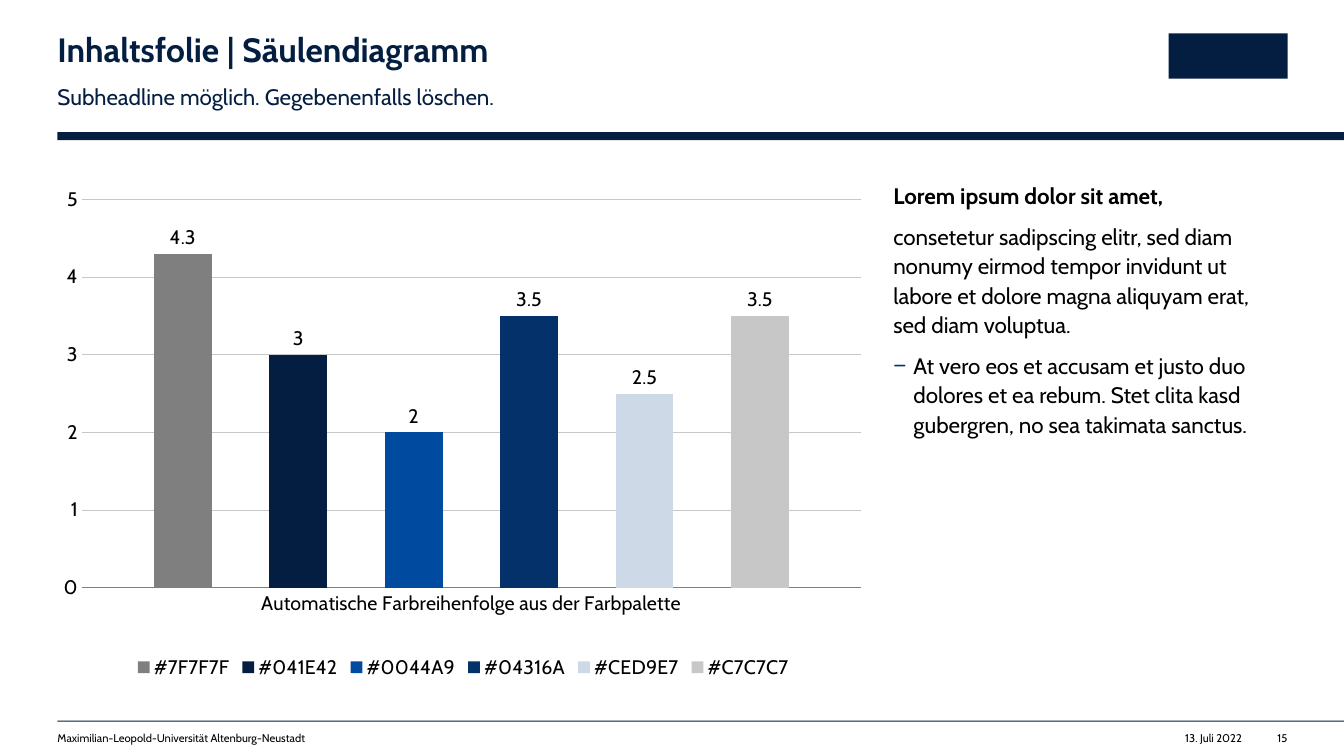
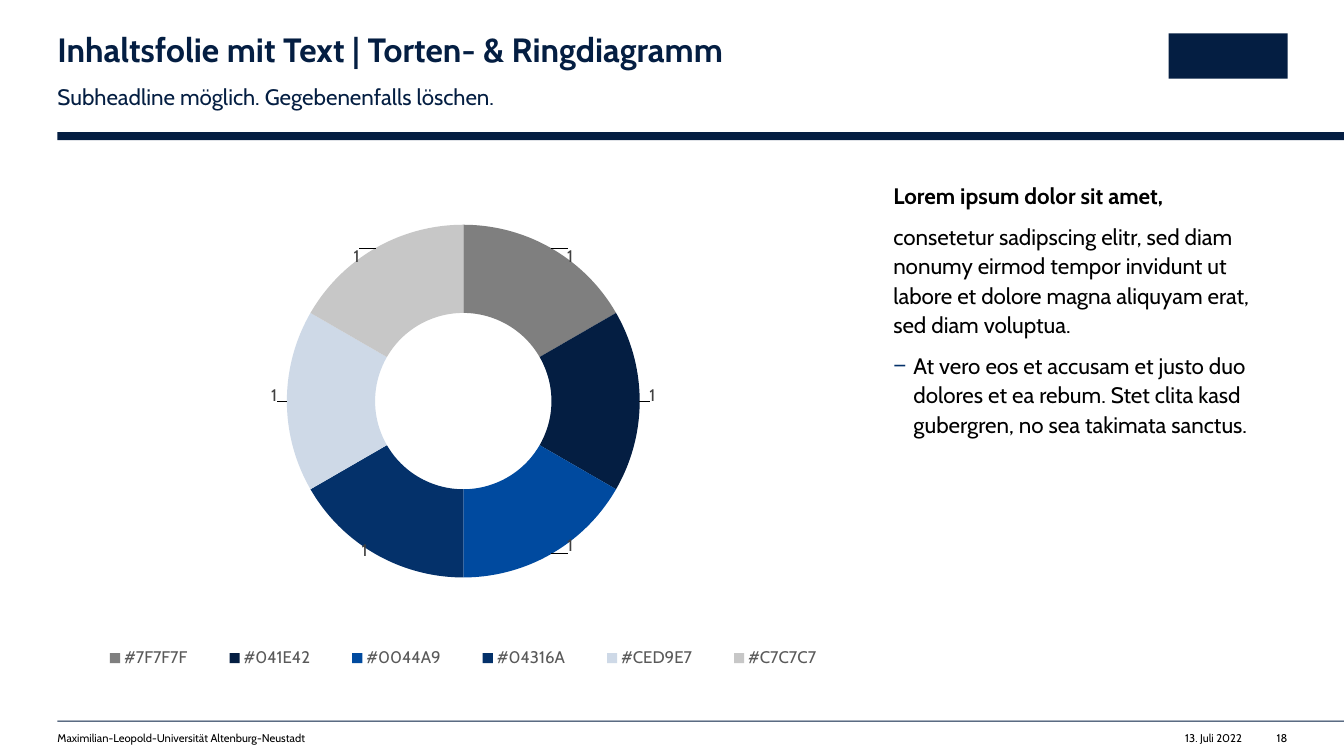
from lxml.etree import SubElement
from pptx import Presentation
from pptx.chart.data import CategoryChartData
from pptx.dml.color import RGBColor
from pptx.enum.chart import XL_CHART_TYPE as ChartType
from pptx.enum.chart import XL_LABEL_POSITION as LabelPosition
from pptx.enum.chart import XL_LEGEND_POSITION as LegendPosition
from pptx.enum.chart import XL_TICK_MARK as TickMark
from pptx.enum.shapes import MSO_SHAPE as Shape
from pptx.enum.text import MSO_ANCHOR as Anchor
from pptx.enum.text import MSO_AUTO_SIZE as AutoSize
from pptx.enum.text import PP_ALIGN as Align
from pptx.oxml.ns import qn
from pptx.util import Inches, Pt

rgb = RGBColor.from_string
FONT = "Cabin"
NAVY, BLACK, GRAY, LIGHT_GRAY = "041E42", "000000", "7F7F7F", "C7C7C7"
PALETTE = {
    "#7F7F7F": GRAY,
    "#041E42": NAVY,
    "#0044A9": "004A9F",
    "#04316A": "04316A",
    "#CED9E7": "CED9E7",
    "#C7C7C7": LIGHT_GRAY,
}
LEFT, RIGHT, SLIDE_WIDTH = 0.57, 12.77, 13.33
CHART_BOX = [Inches(v) for v in (LEFT, 1.78, 8.05, 5)]

PAGES = [
    ("Inhaltsfolie | Säulendiagramm", "15"),
    ("Inhaltsfolie mit Text | Torten- & Ringdiagramm", "18"),
]
BANDS = [  # left, top, width, height
    (LEFT, 1.31, SLIDE_WIDTH - LEFT, 0.08),
    (LEFT, 7.15, SLIDE_WIDTH - LEFT, 0.01),
    (11.59, 0.33, 1.18, 0.45),
]
BODY = [
    "Lorem ipsum dolor sit amet,",
    "consetetur sadipscing elitr, sed diam nonumy eirmod tempor invidunt ut "
    "labore et dolore magna aliquyam erat, sed diam voluptua.",
    "At vero eos et accusam et justo duo dolores et ea rebum. Stet clita kasd "
    "gubergren, no sea takimata sanctus.",
]


def style(font, size, color, bold=False):
    font.name, font.size, font.bold = FONT, Pt(size), bold
    font.color.rgb = rgb(color)


def set_layout(parent, index, **values):
    """Give a chart part a manual layout, as fractions of the chart."""
    for old in parent.findall(qn("c:layout")):
        parent.remove(old)
    layout = SubElement(parent, qn("c:layout"))
    parent.insert(index, layout)
    manual = SubElement(layout, qn("c:manualLayout"))
    for tag, value in values.items():
        SubElement(manual, qn("c:" + tag)).set("val", str(value))


prs = Presentation()
prs.slide_width, prs.slide_height = Inches(SLIDE_WIDTH), Inches(7.5)

slides = []
for heading, number in PAGES:
    slide = prs.slides.add_slide(prs.slide_layouts[1])
    slides.append(slide)

    for box in BANDS:
        band = slide.shapes.add_shape(Shape.RECTANGLE, *[Inches(v) for v in box])
        band.shadow.inherit = False
        band.fill.solid()
        band.fill.fore_color.rgb = rgb(NAVY)
        band.line.fill.background()

    lines = [  # text, left, top, width, height, size, color, alignment
        ("Subheadline möglich. Gegebenenfalls löschen.",
         LEFT, 0.8, 7.3, 0.27, 16, NAVY, Align.LEFT),
        ("Maximilian-Leopold-Universität Altenburg-Neustadt",
         LEFT, 7.26, 5.98, 0.13, 8, BLACK, Align.LEFT),
        ("13. Juli 2022", 11.32, 7.26, 1, 0.13, 8, BLACK, Align.RIGHT),
        (number, RIGHT - 0.4, 7.26, 0.4, 0.13, 8, BLACK, Align.RIGHT),
    ]
    for text, left, top, width, height, size, color, alignment in lines:
        frame = slide.shapes.add_textbox(
            Inches(left), Inches(top), Inches(width), Inches(height)).text_frame
        frame.word_wrap = True
        frame.margin_left = frame.margin_right = 0
        frame.margin_top = frame.margin_bottom = 0
        paragraph = frame.paragraphs[0]
        paragraph.text, paragraph.alignment = text, alignment
        paragraph.line_spacing = 1.1 if size == 16 else 1.0
        style(paragraph.font, size, color)

    title, body = slide.shapes.title, slide.placeholders[1]
    for holder, box in ((title, (LEFT, 0.33, 7.49, 0.36)),
                        (body, (8.86, 1.78, 3.91, 5))):
        holder.left, holder.top, holder.width, holder.height = [
            Inches(v) for v in box]
        frame = holder.text_frame
        frame.margin_left = frame.margin_right = 0
        frame.margin_top = frame.margin_bottom = 0
        frame.vertical_anchor = Anchor.TOP
        frame.word_wrap = True
        frame.auto_size = AutoSize.NONE

    title.text_frame.text = heading
    paragraph = title.text_frame.paragraphs[0]
    paragraph.alignment, paragraph.line_spacing = Align.LEFT, 0.9
    style(paragraph.font, 24, NAVY, bold=True)

    body.text_frame.margin_right = Inches(0.2)
    body.text_frame.text = "\n".join(BODY)
    for index, paragraph in enumerate(body.text_frame.paragraphs):
        style(paragraph.font, 16, BLACK, bold=index == 0)
        paragraph.line_spacing = 1.1
        paragraph.space_before, paragraph.space_after = Pt(0), Pt(8)
        properties = paragraph._p.get_or_add_pPr()
        indent = 0
        if index == 2:
            paragraph.level = 1
            indent = Inches(0.2)
            bullet_color = SubElement(properties, qn("a:buClr"))
            SubElement(bullet_color, qn("a:srgbClr")).set("val", PALETTE["#04316A"])
            SubElement(properties, qn("a:buChar")).set("char", "−")
        else:
            SubElement(properties, qn("a:buNone"))
        properties.set("marL", str(indent))
        properties.set("indent", str(-indent))

# Column chart
column_data = CategoryChartData()
column_data.categories = ["Automatische Farbreihenfolge aus der Farbpalette"]
for name, value in zip(PALETTE, (4.3, 3, 2, 3.5, 2.5, 3.5)):
    column_data.add_series(name, [value])
columns = slides[0].shapes.add_chart(
    ChartType.COLUMN_CLUSTERED, *CHART_BOX, column_data).chart
style(columns.font, 14, BLACK)

column_plot = columns.plots[0]
column_plot.gap_width, column_plot.overlap = 250, -100
column_plot.vary_by_categories = False
for series, color in zip(column_plot.series, PALETTE.values()):
    series.format.fill.solid()
    series.format.fill.fore_color.rgb = rgb(color)
    labels = series.data_labels
    labels.show_value, labels.position = True, LabelPosition.OUTSIDE_END
    style(labels.font, 14, BLACK)

value_axis, category_axis = columns.value_axis, columns.category_axis
for axis in (value_axis, category_axis):
    axis.major_tick_mark = axis.minor_tick_mark = TickMark.NONE
    style(axis.tick_labels.font, 14, BLACK)
value_axis.minimum_scale, value_axis.maximum_scale = 0, 5
value_axis.major_unit = 1
value_axis.format.line.fill.background()
for line, color in ((value_axis.major_gridlines.format.line, LIGHT_GRAY),
                    (category_axis.format.line, GRAY)):
    line.color.rgb, line.width = rgb(color), Pt(0.5)

# Doughnut chart
ring_data = CategoryChartData()
ring_data.categories = list(PALETTE)
ring_data.add_series("Series 1", [1] * len(PALETTE))
ring = slides[1].shapes.add_chart(
    ChartType.DOUGHNUT, *CHART_BOX, ring_data).chart
style(ring.font, 10, BLACK)

ring_plot = ring.plots[0]
ring_plot.vary_by_categories = True
ring_plot._element.find(qn("c:holeSize")).set("val", "80")
ring_series = ring_plot.series[0]
ring_series.data_labels.show_value = True
style(ring_series.data_labels.font, 12, "404040")
LABEL_SHIFTS = [(0.05, -0.06), (0.07, -0.01), (0.05, 0.06),
                (-0.04, 0.07), (-0.07, -0.01), (-0.05, -0.06)]
for index, color in enumerate(PALETTE.values()):
    point = ring_series.points[index]
    point.format.fill.solid()
    point.format.fill.fore_color.rgb = rgb(color)
    style(point.data_label.font, 12, "404040")
for label, (x, y) in zip(ring_series._element.iter(qn("c:dLbl")), LABEL_SHIFTS):
    set_layout(label, 1, x=x, y=y)

# Legends and plot areas
for chart, size, color, (x, y, w, h) in (
        (columns, 14, BLACK, (0.03, 0.04, 0.96, 0.77)),
        (ring, 12, "595959", (0.21, 0.09, 0.58, 0.7))):
    chart.has_title = False
    chart.has_legend = True
    chart.legend.position = LegendPosition.BOTTOM
    chart.legend.include_in_layout = False
    style(chart.legend.font, size, color)
    plot_area = chart._chartSpace.find(".//" + qn("c:plotArea"))
    set_layout(plot_area, 0, layoutTarget="inner", xMode="edge", yMode="edge",
               x=x, y=y, w=w, h=h)
set_layout(ring.legend._element, 1, xMode="edge", yMode="edge",
           x=0.02, y=0.91, w=0.96, h=0.08)

prs.save("out.pptx")
